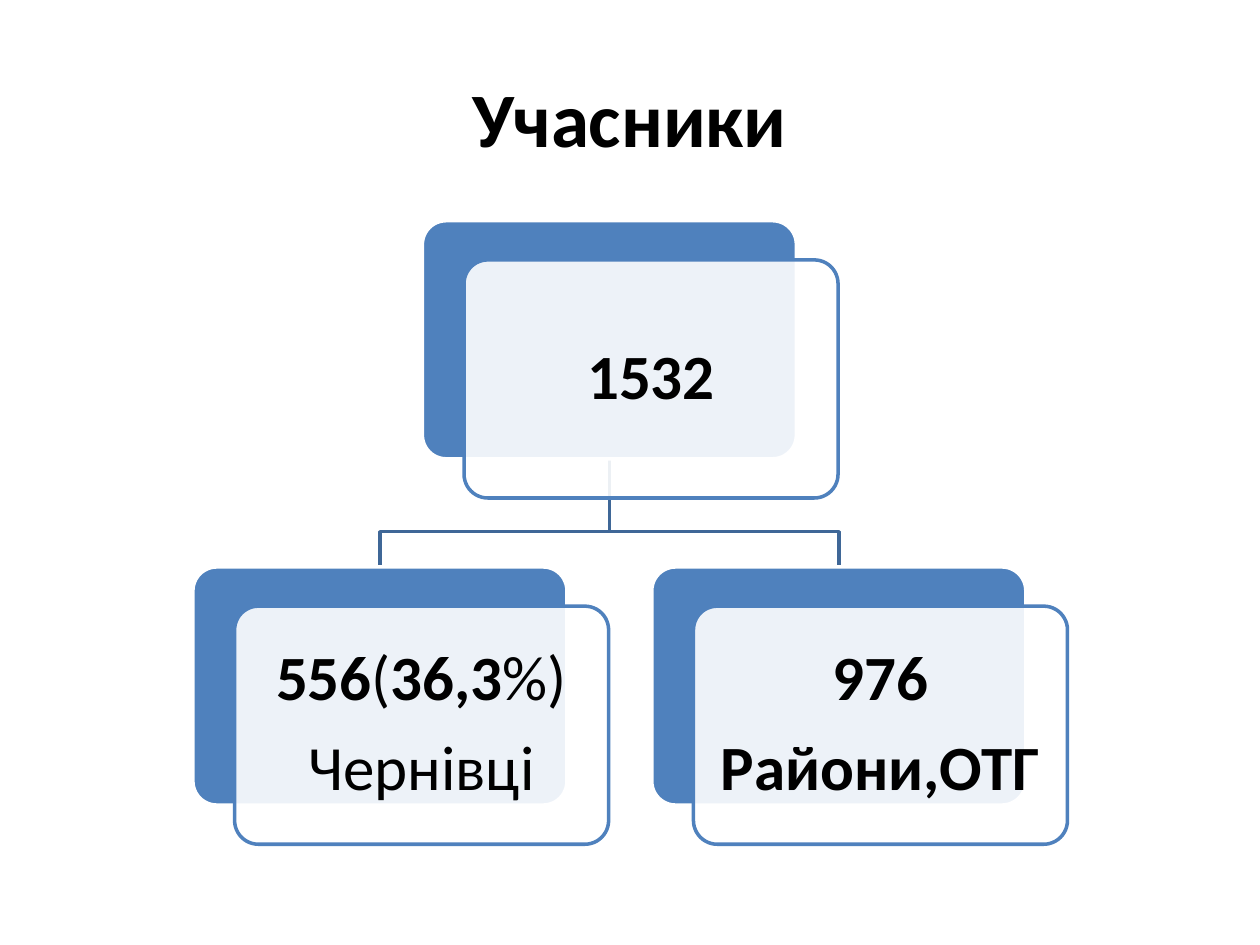
"""Build a slide with a two-level chart of participant numbers."""
import pptx
import pptx.util
import pptx.dml.color
import pptx.enum.shapes
import pptx.enum.text
import pptx.oxml.ns
import lxml.etree

Cm, Pt = pptx.util.Cm, pptx.util.Pt

HUES = {"text": "000000", "blue": "4F81BD", "link": "3F6797", "white": "FFFFFF"}
FONT = "Calibri"
TITLE = [[("Учасники", True)]]
ROOT = [[("1532", True)]]
KIDS = [
    [[("556", True), ("(", False), ("36,3", True), ("%)", False)], [("Чернівці", False)]],
    [[("976", True)], [("Райони,ОТГ", True)]],
]

WIDE, HIGH = 7.54, 4.8
LEFT, TOP = 3.89, 4.45
STEP, DROP = 9.25, 6.98
SHIFT, SINK = 0.84, 0.79
BEND = 10.72


def tint(name):
    return pptx.dml.color.RGBColor.from_string(HUES[name])


def style(shape, fill, line):
    shape.shadow.inherit = False
    if fill:
        shape.fill.solid()
        shape.fill.fore_color.rgb = tint(fill)
    else:
        shape.fill.background()
    shape.line.color.rgb = tint(line)
    shape.line.width = Pt(2)


def write(shape, rows, size, inset, lead=1.0, gap=0):
    frame = shape.text_frame
    frame.word_wrap = True
    frame.vertical_anchor = pptx.enum.text.MSO_ANCHOR.MIDDLE
    frame.margin_left = frame.margin_right = Cm(inset)
    frame.margin_top = frame.margin_bottom = Cm(inset)
    for i, row in enumerate(rows):
        para = frame.paragraphs[0] if i == 0 else frame.add_paragraph()
        para.alignment = pptx.enum.text.PP_ALIGN.CENTER
        para.line_spacing = lead
        para.space_after = Pt(gap)
        for words, bold in row:
            run = para.add_run()
            run.text = words
            run.font.name = FONT
            run.font.size = Pt(size)
            run.font.bold = bold
            run.font.color.rgb = tint("text")


def plate(shapes, x, y, fill, line):
    kind = pptx.enum.shapes.MSO_SHAPE.ROUNDED_RECTANGLE
    shape = shapes.add_shape(kind, Cm(x), Cm(y), Cm(WIDE), Cm(HIGH))
    shape.adjustments[0] = 0.1
    style(shape, fill, line)
    return shape


def card(shapes, x, y, rows):
    plate(shapes, x, y, "blue", "white")
    front = plate(shapes, x + SHIFT, y + SINK, "white", "blue")
    shade = front.fill._xPr.find(".//" + pptx.oxml.ns.qn("a:srgbClr"))
    lxml.etree.SubElement(shade, pptx.oxml.ns.qn("a:alpha"), val="90000")
    write(front, rows, 36, 0.24, 0.9, 12.6)


def link(shapes, x, y, end, base):
    pen = shapes.build_freeform(Cm(x), Cm(y))
    spots = [(x, BEND), (end, BEND), (end, base)]
    pen.add_line_segments([(Cm(a), Cm(b)) for a, b in spots], close=False)
    style(pen.convert_to_shape(), None, "link")


def main():
    deck = pptx.Presentation()
    deck.slide_width, deck.slide_height = Cm(25.4), Cm(19.05)
    shapes = deck.slides.add_slide(deck.slide_layouts[6]).shapes

    head = shapes.add_textbox(Cm(1.27), Cm(0.76), Cm(22.86), Cm(3.18))
    write(head, TITLE, 44, 0.13)

    mid = LEFT + STEP * (len(KIDS) - 1) / 2
    base = TOP + DROP
    spots = [LEFT + i * STEP for i in range(len(KIDS))]
    for x in reversed(spots):
        link(shapes, mid + WIDE / 2, TOP + HIGH, x + WIDE / 2, base)
    card(shapes, mid, TOP, ROOT)
    for x, rows in zip(spots, KIDS):
        card(shapes, x, base, rows)

    deck.save("out.pptx")


if __name__ == "__main__":
    main()
